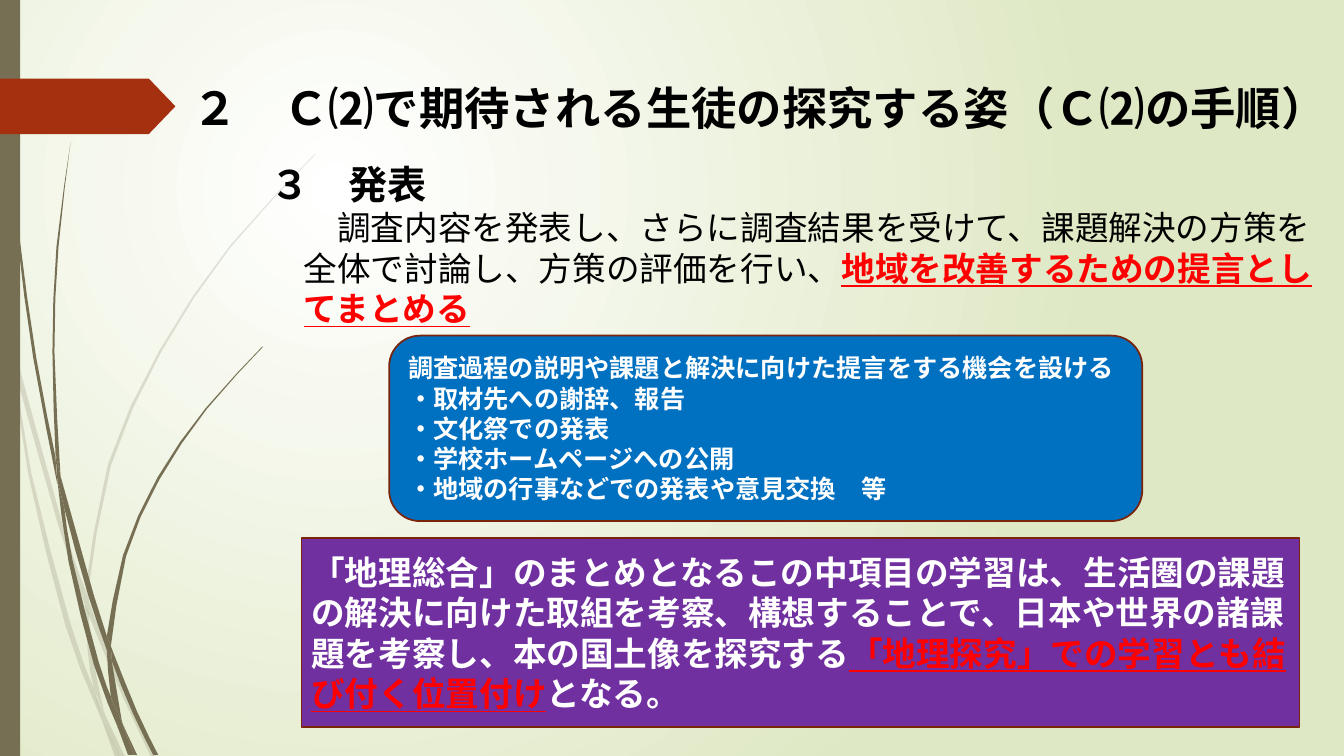
from lxml import etree
from pptx import Presentation
from pptx.dml.color import RGBColor
from pptx.enum.shapes import MSO_SHAPE
from pptx.enum.text import MSO_ANCHOR, PP_ALIGN
from pptx.oxml.ns import qn
from pptx.util import Inches, Pt

RECT, ROUNDED, TAG = MSO_SHAPE.RECTANGLE, MSO_SHAPE.ROUNDED_RECTANGLE, MSO_SHAPE.PENTAGON
MIDDLE, LEFT = MSO_ANCHOR.MIDDLE, PP_ALIGN.LEFT
WIDTH, HEIGHT = 13.33, 7.5
UNITS = 1000  # freeform units per inch
OLIVE, RUST, DARK_RUST = "766F54", "A53010", "7A240C"
BLUE, PURPLE, RED = "0070C0", "7030A0", "FF0000"
BLACK, WHITE = "000000", "FFFFFF"
BODY_FONT, HEAD_FONT = "Arial", "TeX Gyre Adventor"

# Grass blades: one edge, then the opposite edge back, in inches
PALE_BLADES = [
    ([(.11, 3.5), (.09, 3.22), (0, 2.82)], [(0, 2.99), (.1, 3.44)]),
    ([(.17, 3.76), (.58, 5.22), (.84, 5.99)], [(.85, 5.86), (.62, 5.2), (.14, 3.45)]),
    ([(.88, 5.96), (.88, 6.1), (1.23, 6.94), (1.5, 7.51)],
     [(1.55, 7.51), (1.27, 6.92), (.92, 6.07)]),
    ([(1.05, 7.11), (1.19, 7.51)], [(1.24, 7.51)]),
    ([(.11, 3.5), (.28, 4.7), (.65, 6.21), (.92, 6.93), (1.01, 7.14)],
     [(.93, 6.83), (.7, 6.19), (.31, 4.69), (.17, 3.76)]),
    ([(.84, 5.99), (.87, 6.46), (.93, 6.83), (1.05, 7.11)],
     [(1.03, 7.06), (.91, 6.46), (.88, 6.08)]),
    ([(.88, 5.96), (.88, 5.84), (1.1, 4.62), (1.6, 3.49), (2.29, 2.45), (3.12, 1.54)],
     [(3.12, 1.53), (2.28, 2.44), (1.58, 3.48), (1.07, 4.61), (.85, 5.84)]),
    ([(1.01, 7.14), (1.14, 7.51)], [(1.19, 7.51)]),
    ([(.84, 5.99), (.88, 6.1)], [(.88, 5.96), (.85, 5.86)]),
    ([(.93, 6.83), (1.01, 7.14), (1.19, 7.51)], [(1.05, 7.11), (.96, 6.92)]),
]
DARK_BLADES = [
    ([(.03, 0), (.07, 1.1), (.17, 2.33), (.33, 3.55), (.57, 4.81)],
     [(.55, 4.53), (.36, 3.55), (.19, 2.32), (.08, 1.09), (.04, 0)]),
    ([(.6, 4.72), (.64, 5.05), (.88, 5.92), (1.06, 6.45)], [(1.06, 6.31), (.93, 5.9)]),
    ([(1.1, 6.41), (1.11, 6.56), (1.32, 7.08), (1.52, 7.49)],
     [(1.57, 7.49), (1.36, 7.06), (1.13, 6.49)]),
    ([(.57, 4.77), (.68, 5.57), (.93, 6.59), (1.17, 7.22)],
     [(1.1, 6.91), (.98, 6.57), (.72, 5.56), (.64, 5.05)]),
    ([(.6, 4.72), (.54, 3.49), (.58, 2.45), (.7, 1.41)],
     [(.7, 1.41), (.56, 2.45), (.52, 3.49), (.55, 4.49)]),
    ([(1.22, 7.19), (1.33, 7.49)], [(1.36, 7.49)]),
    ([(.55, 4.49), (.57, 4.77), (.64, 5.05)], [(.6, 4.72)]),
    ([(1.1, 6.41), (1.25, 5.52), (1.58, 4.76), (2.05, 4.06), (2.61, 3.44)],
     [(2.6, 3.44), (2.04, 4.05), (1.56, 4.74), (1.22, 5.51), (1.06, 6.31)]),
    ([(1.17, 7.22), (1.27, 7.49)], [(1.31, 7.49)]),
    ([(1.06, 6.45), (1.1, 6.91), (1.22, 7.19)], [(1.21, 7.16), (1.11, 6.56)]),
    ([(1.06, 6.31), (1.06, 6.45), (1.11, 6.56)], [(1.1, 6.41)]),
    ([(1.1, 6.91), (1.17, 7.22), (1.3, 7.49)], [(1.33, 7.49), (1.22, 7.19)]),
]

TITLE = "２　Ｃ⑵で期待される生徒の探究する姿（Ｃ⑵の手順）"
HEADING = "３　発表"
STEP_LINES = [
    [("調査内容を発表し、さらに調査結果を受けて、課題解決の方策を", False)],
    [("全体で討論し、方策の評価を行い、", False), ("地域を改善するための提言とし", True)],
    [("てまとめる", True)],
]
OPPORTUNITIES = [
    "調査過程の説明や課題と解決に向けた提言をする機会を設ける",
    "・取材先への謝辞、報告",
    "・文化祭での発表",
    "・学校ホームページへの公開",
    "・地域の行事などでの発表や意見交換　等",
]
CONCLUSION = [
    ("「地理総合」のまとめとなるこの中項目の学習は、生活圏の課題の解決に向けた取組を"
     "考察、構想することで、日本や世界の諸課題を考察し、本の国土像を探究する", False),
    ("「地理探究」での学習とも結び付く位置付け", True),
    ("となる。", False),
]


def color(hex_value):
    return RGBColor.from_string(hex_value)


def paint(shape, fill, line=None):
    shape.shadow.inherit = False
    shape.fill.solid()
    shape.fill.fore_color.rgb = color(fill)
    if line:
        shape.line.color.rgb = color(line)
        shape.line.width = Pt(1.25)
    else:
        shape.line.fill.background()


def add_block(slide, kind, box, fill, line=None):
    block = slide.shapes.add_shape(kind, *map(Inches, box))
    paint(block, fill, line)
    return block


def add_text(slide, box):
    return slide.shapes.add_textbox(*map(Inches, box)).text_frame


def write(paragraph, pieces, size, font, ink, bold=True):
    """Fill a paragraph with (text, emphasised) pieces."""
    paragraph.alignment = LEFT
    for words, emphasised in pieces:
        run = paragraph.add_run()
        run.text = words
        run.font.size, run.font.name = Pt(size), font
        run.font.bold = bold or emphasised
        run.font.underline = emphasised
        run.font.color.rgb = color(RED if emphasised else ink)


def smooth(edge):
    """Add the Catmull-Rom midpoint to each long segment of an edge."""
    padded = [edge[0], *edge, edge[-1]]
    curve = []
    for a, b, c, d in zip(padded, padded[1:], padded[2:], padded[3:]):
        curve.append(b)
        if abs(c[1] - b[1]) > .3:
            curve.append(tuple((9 * (q + r) - p - s) / 16
                               for p, q, r, s in zip(a, b, c, d)))
    return curve + [edge[-1]]


def add_blade(slide, edges, opacity=None):
    outline = [(x * UNITS, y * UNITS) for edge in edges for x, y in smooth(edge)]
    builder = slide.shapes.build_freeform(*outline[0], scale=Inches(1) / UNITS)
    builder.add_line_segments(outline[1:], close=True)
    blade = builder.convert_to_shape()
    paint(blade, OLIVE)
    if opacity:
        tint = blade.element.spPr.find(qn("a:solidFill"))[0]
        etree.SubElement(tint, qn("a:alpha")).set("val", str(opacity * 1000))


def add_background(slide):
    fill = slide.background.fill
    fill.gradient()
    for stop, tone in zip(fill.gradient_stops, (WHITE, "DFE8C4")):
        stop.color.rgb = color(tone)
    gradient = slide.element.find(".//" + qn("a:gradFill"))
    gradient.remove(gradient.find(qn("a:lin")))
    circle = etree.SubElement(gradient, qn("a:path"), {"path": "circle"})
    etree.SubElement(circle, qn("a:fillToRect"),
                     {"l": "50000", "t": "50000", "r": "100000", "b": "100000"})


def add_decoration(slide):
    for edges in PALE_BLADES:
        add_blade(slide, edges, opacity=20)
    for edges in DARK_BLADES:
        add_blade(slide, edges)
    add_block(slide, RECT, (0, 0, .2, HEIGHT), OLIVE)
    tag = add_block(slide, TAG, (0, .78, 1.74, .55), RUST)
    tag.adjustments[0] = .48


def add_title(slide, box):
    frame = add_text(slide, box)
    frame.word_wrap = False
    write(frame.paragraphs[0], [(TITLE, False)], 32.4, HEAD_FONT, BLACK)


def add_step(slide, box):
    frame = add_text(slide, box)
    frame.word_wrap = True
    write(frame.paragraphs[0], [(HEADING, False)], 28, BODY_FONT, BLACK)
    indent = Pt(24)
    for number, pieces in enumerate(STEP_LINES):
        line = frame.add_paragraph()
        write(line, pieces, 24, BODY_FONT, BLACK, bold=False)
        properties = line._p.get_or_add_pPr()
        properties.set("marL", str(indent))
        properties.set("indent", str(0 if number else indent))


def add_panel(slide, kind, box, fill, paragraphs, size, font):
    frame = add_block(slide, kind, box, fill, DARK_RUST).text_frame
    frame.word_wrap = True
    frame.vertical_anchor = MIDDLE
    for number, pieces in enumerate(paragraphs):
        paragraph = frame.add_paragraph() if number else frame.paragraphs[0]
        write(paragraph, pieces, size, font, WHITE)


def main():
    deck = Presentation()
    deck.slide_width, deck.slide_height = Inches(WIDTH), Inches(HEIGHT)
    slide = deck.slides.add_slide(deck.slide_layouts[6])
    add_background(slide)
    add_decoration(slide)
    add_step(slide, (2.58, 1.54, 10.59, 1.78))
    add_title(slide, (1.81, .75, 11.46, .72))
    add_panel(slide, ROUNDED, (3.86, 3.33, 7.47, 1.84), BLUE,
              [[(line, False)] for line in OPPORTUNITIES], 18, HEAD_FONT)
    add_panel(slide, RECT, (2.99, 5.34, 9.9, 1.87), PURPLE,
              [CONCLUSION], 24, BODY_FONT)
    deck.save("out.pptx")


if __name__ == "__main__":
    main()
